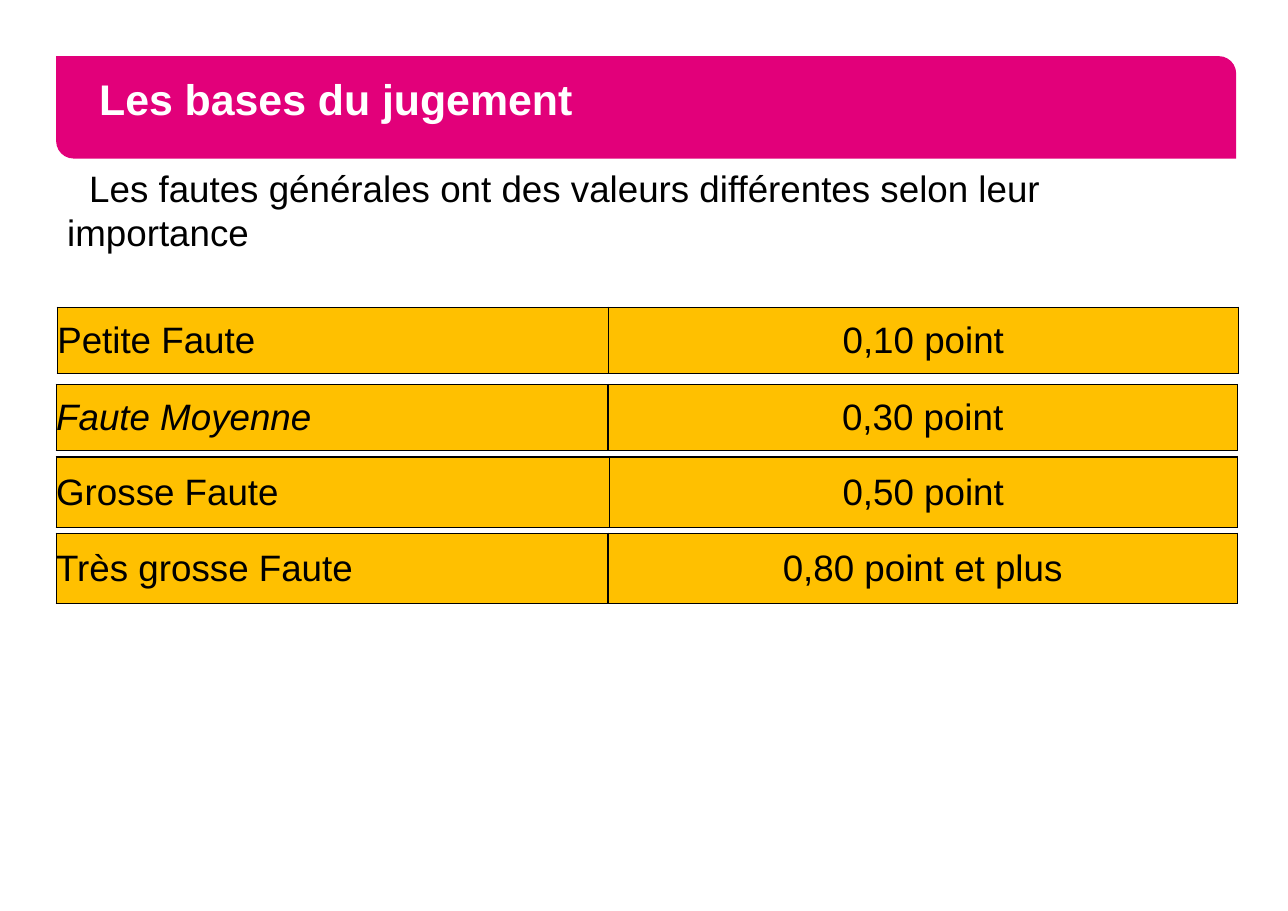
from dataclasses import dataclass

from lxml import etree
from pptx import Presentation
from pptx.dml.color import RGBColor
from pptx.enum.shapes import MSO_SHAPE
from pptx.enum.text import MSO_ANCHOR, PP_ALIGN
from pptx.oxml.ns import qn
from pptx.util import Inches, Pt


@dataclass(frozen=True)
class Theme:
    font: str = "Arial"
    pink: RGBColor = RGBColor(0xE2, 0x00, 0x7A)
    amber: RGBColor = RGBColor(0xFF, 0xC0, 0x00)
    black: RGBColor = RGBColor(0, 0, 0)
    white: RGBColor = RGBColor(255, 255, 255)
    title_size: Pt = Pt(28)
    body_size: Pt = Pt(24)


theme = Theme()


def style_text(p, size, color, bold=False, italic=False):
    for r in p.runs:
        r.font.name = theme.font
        r.font.size = size
        r.font.color.rgb = color
        r.font.bold = bold
        r.font.italic = italic


def add_borders(cell):
    """Draw a 1 pt line on all four sides, placed before the cell's fill."""
    tcPr = cell._tc.get_or_add_tcPr()
    for i, side in enumerate(("a:lnL", "a:lnR", "a:lnT", "a:lnB")):
        ln = etree.Element(qn(side), w=str(Pt(1)))
        fill = etree.SubElement(ln, qn("a:solidFill"))
        etree.SubElement(fill, qn("a:srgbClr"), val=str(theme.black))
        tcPr.insert(i, ln)


prs = Presentation()
prs.slide_width, prs.slide_height = Inches(11.69), Inches(8.27)
s = prs.slides.add_slide(prs.slide_layouts[5])

# Title on its banner
header_box = [Inches(n) for n in (0.51, 0.51, 10.71, 0.93)]
banner = s.shapes.add_shape(MSO_SHAPE.ROUND_2_DIAG_RECTANGLE, *header_box)
banner.adjustments[0], banner.adjustments[1] = 0, 0.17
banner.shadow.inherit = False
banner.fill.solid()
banner.fill.fore_color.rgb = theme.pink
banner.line.fill.background()

title = s.shapes.title
title.left, title.top, title.width, title.height = header_box
title.element.addprevious(banner.element)
tf = title.text_frame
tf.text = "Les bases du jugement"
tf.word_wrap = True
tf.vertical_anchor = MSO_ANCHOR.MIDDLE
tf.margin_left = tf.margin_right = Inches(0.39)
tf.margin_top = tf.margin_bottom = Inches(0.05)
p = tf.paragraphs[0]
p.alignment = PP_ALIGN.LEFT
p.line_spacing = Pt(22)
style_text(p, theme.title_size, theme.white, bold=True)

# Introduction
intro = s.shapes.add_textbox(Inches(0.56), Inches(1.46), Inches(10.62), Inches(6.76))
tf = intro.text_frame
tf.text = "Les fautes générales ont des valeurs différentes selon leur importance"
tf.word_wrap = True
tf.margin_left = tf.margin_right = tf.margin_top = tf.margin_bottom = Inches(0.05)
p = tf.paragraphs[0]
p._p.get_or_add_pPr().set("indent", str(Inches(0.2)))
style_text(p, theme.body_size, theme.black)

# One single-row table per fault: label, points, left, top, height, label width
TABLE_WIDTH = 10.72
faults = [
    ("Petite Faute", "0,10 point", 0.52, 2.79, 0.6, 5),
    ("Faute Moyenne", "0,30 point", 0.51, 3.49, 0.6, 5.01),
    ("Grosse Faute", "0,50 point", 0.51, 4.15, 0.64, 5.02),
    ("Très grosse Faute", "0,80 point et plus", 0.51, 4.84, 0.64, 5.01),
]
for label, points, left, top, height, label_width in faults:
    table = s.shapes.add_table(
        1, 2, Inches(left), Inches(top), Inches(TABLE_WIDTH), Inches(height)
    ).table
    table.first_row = table.horz_banding = False
    table.columns[0].width = Inches(label_width)
    table.columns[1].width = Inches(TABLE_WIDTH - label_width)
    for cell, text, align in zip(
        table.rows[0].cells, (label, points), (PP_ALIGN.LEFT, PP_ALIGN.CENTER)
    ):
        cell.text = text
        cell.vertical_anchor = MSO_ANCHOR.MIDDLE
        cell.margin_left = cell.margin_right = cell.margin_top = cell.margin_bottom = 0
        cell.fill.solid()
        cell.fill.fore_color.rgb = theme.amber
        add_borders(cell)
        p = cell.text_frame.paragraphs[0]
        p.alignment = align
        style_text(p, theme.body_size, theme.black, italic=text == "Faute Moyenne")

prs.save("out.pptx")
